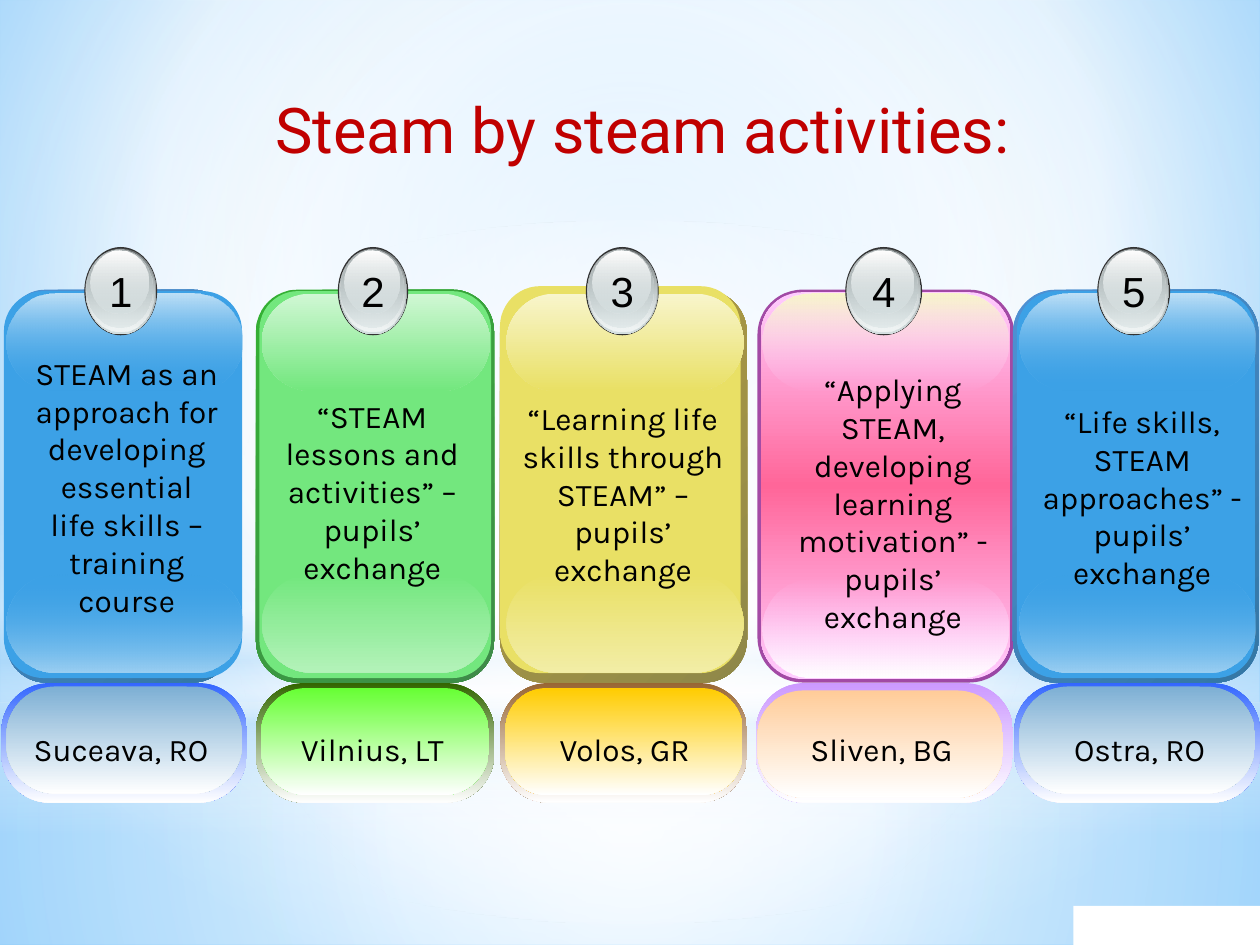
from dataclasses import dataclass

from lxml import etree
from pptx import Presentation
from pptx.enum.shapes import MSO_SHAPE
from pptx.enum.text import MSO_ANCHOR, PP_ALIGN
from pptx.dml.color import RGBColor
from pptx.oxml.ns import qn
from pptx.util import Cm, Pt

RECT = MSO_SHAPE.RECTANGLE
ROUNDED = MSO_SHAPE.ROUNDED_RECTANGLE
OVAL = MSO_SHAPE.OVAL
TOP = MSO_ANCHOR.TOP
CENTER = PP_ALIGN.CENTER
LEFT = PP_ALIGN.LEFT

COLORS = {
    "white": "FFFFFF", "black": "000000", "title": "C00000",
    "sky": "9ED5FF", "deep sky": "5BB9FF", "mist": "B4DCFA",
    "blue rim": "4E91D4", "blue rim end": "3477A4", "blue": "3CA1E6",
    "blue low": "9BCFF2", "blue high": "BEE0F7", "blue edge": "3366FF", "blue label": "7DAFD4",
    "green rim": "34B034", "green rim end": "3F8B4A", "green": "73E77E",
    "green low": "B3F2B9", "green high": "D0F7D4", "green edge": "336600", "green label": "66FF33",
    "yellow rim": "B59F43", "yellow rim end": "8F8849", "yellow": "E9E065",
    "yellow low": "F2EDA6", "cream": "F8F5CC", "yellow edge": "996633", "yellow label": "FFCC00",
    "purple": "800080", "pink": "FFCCFF", "rose": "FF6699",
    "pink edge": "CC99FF", "pink label": "FFCC99",
    "badge rim": "333333", "steel": "636869", "silver": "D6E1E2",
    "pearl": "F1F5F5", "grey": "AAB2B3",
}


def fade(start, end, start_alpha=100, end_alpha=100):
    return [(0, start, start_alpha), (100, end, end_alpha)]


def solid(color, alpha=100):
    return [(0, color, alpha)]


@dataclass
class Theme:
    rim: list
    face: list
    gloss: str
    veil: int
    low: str
    high: str
    edge: str
    label: str


@dataclass
class Column:
    theme: Theme
    rim: tuple
    face: tuple
    gloss: tuple
    low_top: float
    edge: tuple
    label: tuple
    label_round: float
    badge: tuple
    activity: list
    activity_box: tuple
    place: str
    place_span: tuple
    place_align: int = CENTER


class Deck:
    body_font = "Karla"
    number_font = "Arial"
    title_font = "Roboto"

    def __init__(self, prs):
        self.slide = prs.slides.add_slide(prs.slide_layouts[5])

    def paint(self, holder, stops, angle=90, focus=None):
        def color(parent, name, alpha):
            node = etree.SubElement(parent, qn("a:srgbClr"), val=COLORS[name])
            if alpha < 100:
                etree.SubElement(node, qn("a:alpha"), val=str(alpha * 1000))

        if len(stops) == 1:
            fill = etree.Element(qn("a:solidFill"))
            color(fill, *stops[0][1:])
        else:
            fill = etree.Element(qn("a:gradFill"), rotWithShape="1")
            stop_list = etree.SubElement(fill, qn("a:gsLst"))
            for position, name, alpha in stops:
                color(etree.SubElement(stop_list, qn("a:gs"), pos=str(position * 1000)), name, alpha)
            if focus:
                circle = etree.SubElement(fill, qn("a:path"), path="circle")
                sides = {side: str(value * 1000) for side, value in zip("ltrb", focus)}
                etree.SubElement(circle, qn("a:fillToRect"), **sides)
            else:
                etree.SubElement(fill, qn("a:lin"), ang=str(angle * 60000), scaled="0")
        holder.replace(holder.find(qn("a:noFill")), fill)

    def background(self, stops, focus):
        self.slide.background.fill.background()
        self.paint(self.slide._element.find(".//" + qn("p:bgPr")), stops, focus=focus)

    def shape(self, kind, box, stops, angle=90, focus=None, rounding=None):
        shape = self.slide.shapes.add_shape(kind, *map(Cm, box))
        shape.shadow.inherit = False
        shape.line.fill.background()
        shape.fill.background()
        if rounding is not None:
            shape.adjustments[0] = rounding
        self.paint(shape._element.spPr, stops, angle, focus)

    def format(self, frame, font, size, color="black", align=CENTER, wrap=True):
        frame.word_wrap = wrap
        frame.vertical_anchor = TOP
        for paragraph in frame.paragraphs:
            paragraph.alignment = align
            for run in paragraph.runs:
                run.font.name = font
                run.font.size = Pt(size)
                run.font.color.rgb = RGBColor.from_string(COLORS[color])

    def text(self, box, lines, font=body_font, size=18, align=CENTER, wrap=True):
        frame = self.slide.shapes.add_textbox(*map(Cm, box)).text_frame
        frame.text = "\n".join(lines)
        self.format(frame, font, size, align=align, wrap=wrap)

    def title(self, box, wording):
        title = self.slide.shapes.title
        title.left, title.top, title.width, title.height = map(Cm, box)
        title.text_frame.text = wording
        self.format(title.text_frame, self.title_font, 36, "title")
        self.slide.shapes._spTree.append(title._element)

    def badge(self, number, left, width):
        layers = [
            (0, 0, 0, 1.78, solid("badge rim")),
            (0.03, 0.03, 0.05, 1.73, fade("steel", "silver")),
            (0.03, 0.03, 0.08, 1.68, fade("silver", "pearl", 0)),
            (0.05, 0.05, 0.15, 1.57, fade("grey", "silver", 100, 48)),
            (0.13, 0.08, 0.3, 1.27, fade("white", "silver", 100, 38)),
        ]
        for shift, drop, shrink, height, stops in layers:
            self.shape(OVAL, (left + shift, 4.98 + drop, width - shrink, height), stops)
        self.text((left, 5.23, width, 1.27), [str(number)], self.number_font, 24, wrap=False)

    def column(self, number, col):
        theme = col.theme
        rim_left, rim_width = col.rim
        face_left, face_top, face_width = col.face
        gloss_left, gloss_width = col.gloss
        edge_left, edge_width = col.edge
        label_left, label_top = col.label
        place_left, place_width = col.place_span
        for box, stops, angle, rounding in [
            ((rim_left, 5.84, rim_width, 7.92), theme.rim, 45, 0.175),
            ((face_left, face_top, face_width, 7.8), theme.face, 90, 0.167),
            ((gloss_left, col.low_top, gloss_width, 1.98),
             fade(theme.gloss, theme.low, theme.veil), 90, 0.5),
            ((gloss_left, 5.92, gloss_width, 1.96),
             fade(theme.high, theme.gloss, 100, theme.veil), 90, 0.5),
            ((edge_left, 13.77, edge_width, 2.41), fade(theme.edge, "white"), 90, 0.404),
            ((label_left, label_top, gloss_width, 2.16),
             fade(theme.label, "white"), 90, col.label_round),
        ]:
            self.shape(ROUNDED, box, stops, angle, rounding=rounding)
        self.badge(number, *col.badge)
        self.text(col.activity_box, col.activity)
        self.text((place_left, 14.6, place_width, 1.02), [col.place], align=col.place_align)


BLUE = Theme(fade("blue rim", "blue rim end"), solid("blue"), "blue", 0,
             "blue low", "blue high", "blue edge", "blue label")
GREEN = Theme(fade("green rim", "green rim end"), solid("green"), "green", 100,
              "green low", "green high", "green edge", "green label")
YELLOW = Theme(fade("yellow rim", "yellow rim end"), solid("yellow"), "yellow", 100,
               "yellow low", "cream", "yellow edge", "yellow label")
PINK = Theme(solid("purple", 70), [(0, "pink", 100), (50, "rose", 100), (100, "pink", 100)],
             "pink", 2, "white", "cream", "pink edge", "pink label")

COLUMNS = [
    Column(BLUE, (0.13, 4.55), (0.08, 5.87, 4.8), (0.13, 4.75), 11.58, (0.03, 4.95),
           (0.13, 13.84), 0.456, (1.7, 1.47),
           ["STEAM as an", "approach for", "developing", "essential",
            "life skills – training", "course"],
           (0.13, 7.01, 4.85, 5.64), "Suceava, RO", (0.43, 4.45), LEFT),
    Column(GREEN, (5.16, 4.8), (5.23, 5.87, 4.67), (5.28, 4.6), 11.58, (5.16, 4.8),
           (5.26, 13.87), 0.429, (6.81, 1.42),
           ["“STEAM lessons and activities” – pupils’", "exchange"],
           (5.41, 7.87, 4.19, 4.11), "Vilnius, LT", (5.41, 4.19)),
    Column(YELLOW, (10.08, 4.98), (10.08, 5.77, 4.85), (10.21, 4.78), 11.58, (10.08, 4.98),
           (10.19, 13.87), 0.386, (11.81, 1.47),
           ["“Learning life skills through STEAM” – pupils’", "exchange"],
           (10.21, 7.92, 4.7, 5.64), "Volos, GR", (10.69, 3.81)),
    Column(PINK, (15.27, 5.18), (15.34, 5.89, 5.03), (15.37, 4.95), 11.68, (15.24, 5.18),
           (15.27, 13.92), 0.427, (17.04, 1.55),
           ["“Applying STEAM, developing learning motivation” - pupils’", "exchange"],
           (15.75, 7.34, 4.5, 6.4), "Sliven, BG", (15.52, 4.5)),
    Column(BLUE, (20.42, 4.95), (20.5, 5.87, 4.8), (20.55, 4.75), 11.58, (20.45, 4.95),
           (20.55, 13.84), 0.456, (22.12, 1.47),
           ["“Life skills, STEAM approaches” - pupils’", "exchange"],
           (20.65, 7.98, 4.75, 4.88), "Ostra, RO", (20.65, 4.65)),
]


def main():
    prs = Presentation()
    prs.slide_width, prs.slide_height = Cm(25.4), Cm(19.05)
    deck = Deck(prs)
    middle = (50, 50, 50, 50)
    deck.background([(0, "sky", 100), (60, "white", 100), (100, "deep sky", 100)], (20, 10, 20, 60))
    deck.shape(RECT, (0, 14.17, 25.4, 4.88),
               [(0, "white", 91), (37, "white", 76), (100, "mist", 79)], focus=middle)
    deck.shape(RECT, (0, 0, 25.4, 14.17),
               [(0, "white", 89), (48, "white", 62), (100, "mist", 79)], focus=middle)
    deck.shape(RECT, (0, 10.46, 25.4, 6.35),
               [(0, "white", 0), (29, "white", 30), (45, "mist", 40),
                (55, "white", 26), (65, "mist", 60), (100, "white", 0)])
    deck.shape(OVAL, (0, 4.45, 25.4, 14.17), [(0, "white", 100), (56, "white", 0)], focus=middle)
    deck.title((2.72, 1.7, 20.47, 1.8), "Steam by steam activities:")
    deck.shape(RECT, (21.64, 18.26, 3.76, 0.79), solid("white"))
    for number, column in enumerate(COLUMNS, 1):
        deck.column(number, column)
    prs.save("out.pptx")


if __name__ == "__main__":
    main()
